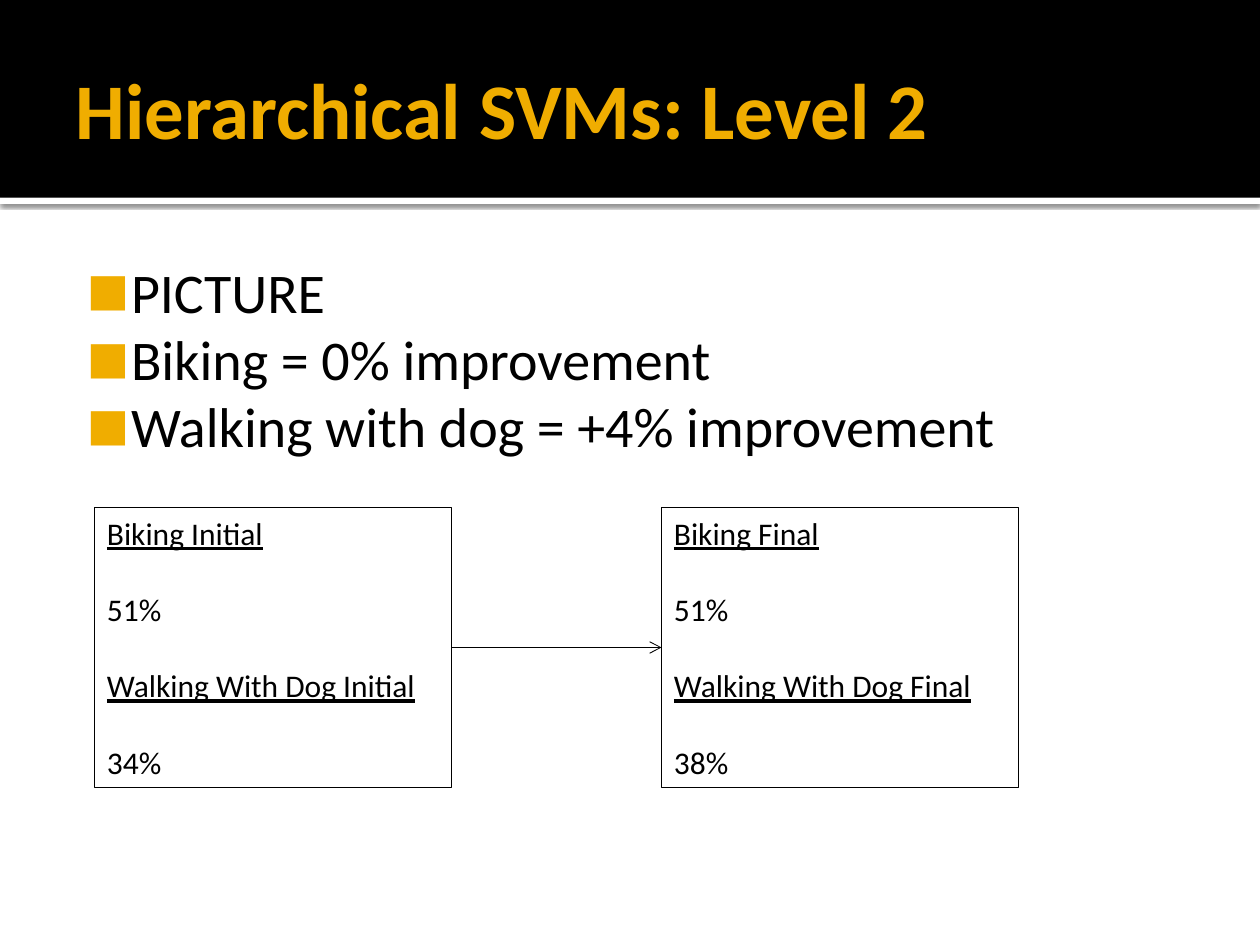
from lxml.etree import SubElement
from pptx import Presentation
from pptx.dml.color import RGBColor
from pptx.enum.shapes import MSO_CONNECTOR, MSO_SHAPE
from pptx.enum.text import MSO_ANCHOR, MSO_AUTO_SIZE, PP_ALIGN
from pptx.oxml.ns import qn
from pptx.util import Pt

BLACK, WHITE, GOLD = "000000", "FFFFFF", "F0AD00"


def color(hex_string):
    return RGBColor.from_string(hex_string)


def add_xml(parent, tag, **attributes):
    return SubElement(parent, qn(tag), {k: str(v) for k, v in attributes.items()})


def apply_format(target, values):
    for key, value in values.items():
        setattr(target, key, value)


def style_font(font, size, hex_string, **values):
    apply_format(font, {"name": "Calibri", "size": Pt(size), **values})
    font.color.rgb = color(hex_string)


def place(shape, box):
    names = ("left", "top", "width", "height")
    apply_format(shape, {name: Pt(length) for name, length in zip(names, box)})


def style_frame(frame, anchor, insets):
    sides = ("margin_left", "margin_top", "margin_right", "margin_bottom")
    apply_format(frame, {side: Pt(inset) for side, inset in zip(sides, insets)})
    apply_format(frame, {"word_wrap": True, "auto_size": MSO_AUTO_SIZE.NONE,
                         "vertical_anchor": anchor})


def add_rectangle(slide, box):
    rectangle = slide.shapes.add_shape(MSO_SHAPE.RECTANGLE, *map(Pt, box))
    rectangle.shadow.inherit = False
    return rectangle


def add_header_band(slide, box):
    """Black band with a white, shadowed strip below, both behind the text."""
    left, top, width, height = box
    band = add_rectangle(slide, box)
    strip = add_rectangle(slide, (left, top + height, width, 3.6))
    for part, fill in ((band, BLACK), (strip, WHITE)):
        part.fill.solid()
        part.fill.fore_color.rgb = color(fill)
        part.line.fill.background()
        slide.shapes._spTree.insert(2, part._element)
    effects = strip._element.spPr.find(qn("a:effectLst"))
    shadow = add_xml(effects, "a:outerShdw", blurRad=Pt(2.5), dist=Pt(0.8),
                     dir=5400000, algn="t", rotWithShape=0)
    shade = add_xml(shadow, "a:srgbClr", val=BLACK)
    add_xml(shade, "a:alpha", val=60000)


def fill_title(slide, box, text):
    title = slide.shapes.title
    place(title, box)
    style_frame(title.text_frame, MSO_ANCHOR.MIDDLE, (7.2, 3.6, 3.6, 3.6))
    title.text_frame.text = text
    paragraph = title.text_frame.paragraphs[0]
    paragraph.alignment = PP_ALIGN.LEFT
    style_font(paragraph.runs[0].font, 45, GOLD, bold=True)


def fill_bullets(slide, box, items):
    body = slide.placeholders[1]
    place(body, box)
    style_frame(body.text_frame, MSO_ANCHOR.TOP, (4.3, 7.2, 7.2, 3.6))
    body.text_frame.text = "\n".join(items)
    for paragraph in body.text_frame.paragraphs:
        apply_format(paragraph, {"space_before": Pt(0), "line_spacing": 1.0})
        style_font(paragraph.runs[0].font, 32, BLACK)
        properties = paragraph._p.get_or_add_pPr()
        properties.set("marL", str(Pt(34.56)))
        properties.set("indent", str(Pt(-25.2)))
        add_xml(add_xml(properties, "a:buClr"), "a:srgbClr", val=GOLD)
        add_xml(properties, "a:buSzPct", val=80000)
        add_xml(properties, "a:buFont", typeface="Calibri")
        add_xml(properties, "a:buChar", char="■")


def add_accuracy_box(slide, box, scores):
    """Outlined box of underlined activity names, each followed by its score."""
    panel = add_rectangle(slide, box)
    panel.fill.background()
    panel.line.color.rgb = color(BLACK)
    panel.line.width = Pt(0.75)
    frame = panel.text_frame
    style_frame(frame, MSO_ANCHOR.TOP, (7.2, 3.6, 7.2, 3.6))
    frame.text = "\n".join(line for score in scores for line in score)
    for index, paragraph in enumerate(frame.paragraphs):
        apply_format(paragraph, {"alignment": PP_ALIGN.LEFT,
                                 "space_before": Pt(22 if index else 0)})
        style_font(paragraph.runs[0].font, 18, BLACK, underline=index % 2 == 0)
    return panel


def add_arrow(slide, source, target):
    """Arrow from the right side of one box to the left side of another."""
    arrow = slide.shapes.add_connector(MSO_CONNECTOR.STRAIGHT, 0, 0, 0, 0)
    arrow.begin_connect(source, 3)
    arrow.end_connect(target, 1)
    arrow.line.color.rgb = color(BLACK)
    arrow.line.width = Pt(0.5)
    add_xml(arrow.line._get_or_add_ln(), "a:tailEnd", type="arrow")
    add_xml(arrow._element.spPr, "a:effectLst")


def add_comparison(slide, box, stages):
    left, top, width, height = box
    panel_width = 204
    step = (width - panel_width) / (len(stages) - 1)
    panels = [
        add_accuracy_box(slide, (left + i * step, top, panel_width, height),
                         [(f"{activity} {stage}", score)
                          for activity, score in scores.items()])
        for i, (stage, scores) in enumerate(stages.items())
    ]
    for source, target in zip(panels, panels[1:]):
        add_arrow(slide, source, target)


def main():
    presentation = Presentation()
    apply_format(presentation, {"slide_width": Pt(720), "slide_height": Pt(540)})
    slide = presentation.slides.add_slide(presentation.slide_layouts[1])
    add_header_band(slide, (0, 0, 720, 113))
    fill_title(slide, (36, 12.25, 648, 98.6), "Hierarchical SVMs: Level 2")
    fill_bullets(slide, (36, 139.7, 648, 364.3), [
        "PICTURE",
        "Biking = 0% improvement",
        "Walking with dog = +4% improvement",
    ])
    add_comparison(slide, (54, 290, 528, 160), {
        "Initial": {"Biking": "51%", "Walking With Dog": "34%"},
        "Final": {"Biking": "51%", "Walking With Dog": "38%"},
    })
    presentation.save("out.pptx")


if __name__ == "__main__":
    main()
